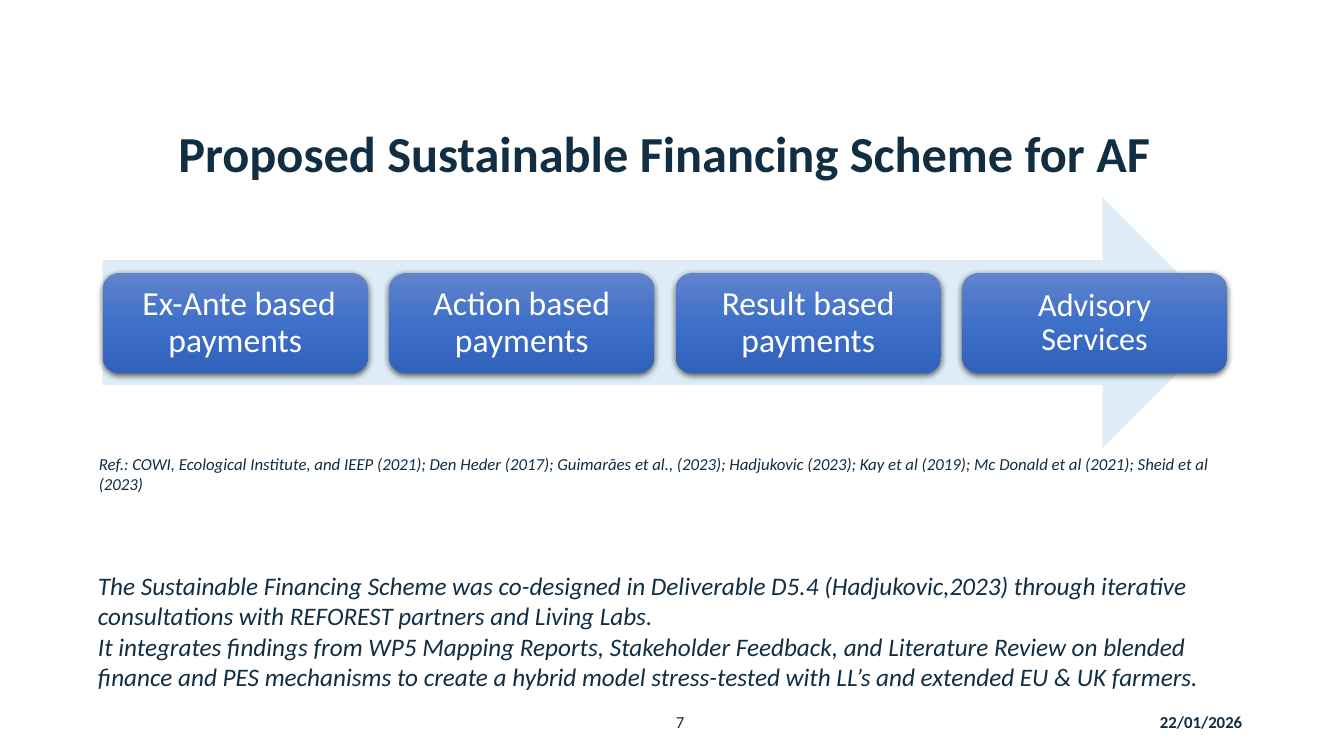
from copy import deepcopy
from dataclasses import dataclass

from lxml.etree import SubElement
from pptx import Presentation
from pptx.dml.color import RGBColor
from pptx.enum.shapes import MSO_SHAPE as Preset
from pptx.enum.text import MSO_ANCHOR as Anchor, MSO_AUTO_SIZE as AutoSize, PP_ALIGN as Align
from pptx.oxml.ns import qn
from pptx.shapes.autoshape import Shape
from pptx.slide import Slide
from pptx.text.text import TextFrame
from pptx.util import Cm, Pt

NAVY = RGBColor(0x11, 0x2E, 0x43)
WHITE = RGBColor(0xFF, 0xFF, 0xFF)
PALE_BLUE = RGBColor(0xDD, 0xEC, 0xF6)
CARD_BLUES = (
    RGBColor(0x61, 0x83, 0xCB),
    RGBColor(0x3E, 0x70, 0xCA),
    RGBColor(0x30, 0x62, 0xBB),
)
FONT = "Calibri"
SCHEME_LEFT = 2.59
CARD_PITCH = 7.22


@dataclass(frozen=True)
class Box:
    left: float
    top: float
    width: float
    height: float

    def lengths(self) -> tuple[Cm, Cm, Cm, Cm]:
        return Cm(self.left), Cm(self.top), Cm(self.width), Cm(self.height)


@dataclass(frozen=True)
class Style:
    size: float
    color: RGBColor = NAVY
    bold: bool = False
    italic: bool = False
    align: Align = Align.LEFT
    anchor: Anchor = Anchor.TOP
    spacing: float = 1.0


@dataclass(frozen=True)
class Note:
    box: Box
    style: Style
    lines: tuple[str, ...]


@dataclass(frozen=True)
class Payment:
    label: str
    size: float = 24


PAYMENTS = (
    Payment(" Ex-Ante based payments"),
    Payment("Action based payments"),
    Payment("Result based payments"),
    Payment("Advisory Services", 23),
)

NOTES = (
    Note(Box(28.98, 17.68, 4.8, 1.01), Style(12, bold=True, anchor=Anchor.MIDDLE), ("22/01/2026",)),
    Note(Box(16.38, 17.68, 1.12, 1.01), Style(12, align=Align.RIGHT, anchor=Anchor.MIDDLE), ("7",)),
    Note(
        Box(2.24, 11.3, 29.06, 1.27),
        Style(12, italic=True),
        (
            "Ref.: COWI, Ecological Institute, and IEEP (2021); Den Heder (2017); "
            "Guimarães et al., (2023); Hadjukovic (2023); Kay et al (2019); "
            "Mc Donald et al (2021); Sheid et al (2023)",
        ),
    ),
    Note(
        Box(2.22, 14.25, 29.08, 3.33),
        Style(18, italic=True),
        (
            "The Sustainable Financing Scheme was co-designed in Deliverable D5.4 "
            "(Hadjukovic,2023) through iterative consultations with REFOREST partners "
            "and Living Labs.",
            "It integrates findings from WP5 Mapping Reports, Stakeholder Feedback, and "
            "Literature Review on blended finance and PES mechanisms to create a hybrid "
            "model stress-tested with LL’s and extended EU & UK farmers.",
        ),
    ),
)


def write(frame: TextFrame, lines: tuple[str, ...], style: Style) -> None:
    frame.word_wrap = True
    frame.auto_size = AutoSize.NONE
    frame.vertical_anchor = style.anchor
    for index, line in enumerate(lines):
        paragraph = frame.add_paragraph() if index else frame.paragraphs[0]
        paragraph.alignment = style.align
        paragraph.line_spacing = style.spacing
        run = paragraph.add_run()
        run.text = line
        font = run.font
        font.name = FONT
        font.size = Pt(style.size)
        font.bold = style.bold
        font.italic = style.italic
        font.color.rgb = style.color


def add_plain_shape(slide: Slide, preset: Preset, box: Box) -> Shape:
    shape = slide.shapes.add_shape(preset, *box.lengths())
    shape.shadow.inherit = False
    shape.line.fill.background()
    return shape


def shade(card: Shape) -> None:
    card.fill.gradient()
    card.fill.gradient_angle = 270
    stop_list = card.element.spPr.find(qn("a:gradFill")).find(qn("a:gsLst"))
    stop_list.append(deepcopy(stop_list[-1]))
    for index, (stop, blue) in enumerate(zip(card.fill.gradient_stops, CARD_BLUES)):
        stop.position = index / 2
        stop.color.rgb = blue


def cast_shadow(card: Shape) -> None:
    effects = card.element.spPr.find(qn("a:effectLst"))
    shadow = SubElement(
        effects,
        qn("a:outerShdw"),
        blurRad=str(Pt(4.5)),
        dist=str(Pt(1.5)),
        dir="5400000",
        algn="ctr",
        rotWithShape="0",
    )
    black = SubElement(shadow, qn("a:srgbClr"), val="000000")
    SubElement(black, qn("a:alpha"), val="63000")


def add_card(slide: Slide, payment: Payment, left: float) -> None:
    card = add_plain_shape(slide, Preset.ROUNDED_RECTANGLE, Box(left, 6.88, 6.68, 2.52))
    shade(card)
    cast_shadow(card)
    frame = card.text_frame
    frame.margin_left = frame.margin_right = Cm(0.36)
    frame.margin_top = frame.margin_bottom = Cm(0.36)
    write(
        frame,
        (payment.label,),
        Style(payment.size, WHITE, align=Align.CENTER, anchor=Anchor.MIDDLE, spacing=0.9),
    )


def add_note(slide: Slide, note: Note) -> None:
    write(slide.shapes.add_textbox(*note.box.lengths()).text_frame, note.lines, note.style)


def main() -> None:
    deck = Presentation()
    deck.slide_width, deck.slide_height = Cm(33.87), Cm(19.05)
    slide = deck.slides.add_slide(deck.slide_layouts[5])

    title = slide.shapes.title
    title.left, title.top, title.width, title.height = Box(4.19, 3.02, 25.12, 1.73).lengths()
    write(
        title.text_frame,
        ("Proposed Sustainable Financing Scheme for AF",),
        Style(36, bold=True, align=Align.CENTER, anchor=Anchor.BOTTOM, spacing=0.9),
    )

    arrow = add_plain_shape(slide, Preset.RIGHT_ARROW, Box(SCHEME_LEFT, 4.98, 28.35, 6.3))
    arrow.fill.solid()
    arrow.fill.fore_color.rgb = PALE_BLUE

    for index, payment in enumerate(PAYMENTS):
        add_card(slide, payment, SCHEME_LEFT + index * CARD_PITCH)
    for note in NOTES:
        add_note(slide, note)

    deck.save("out.pptx")


if __name__ == "__main__":
    main()
